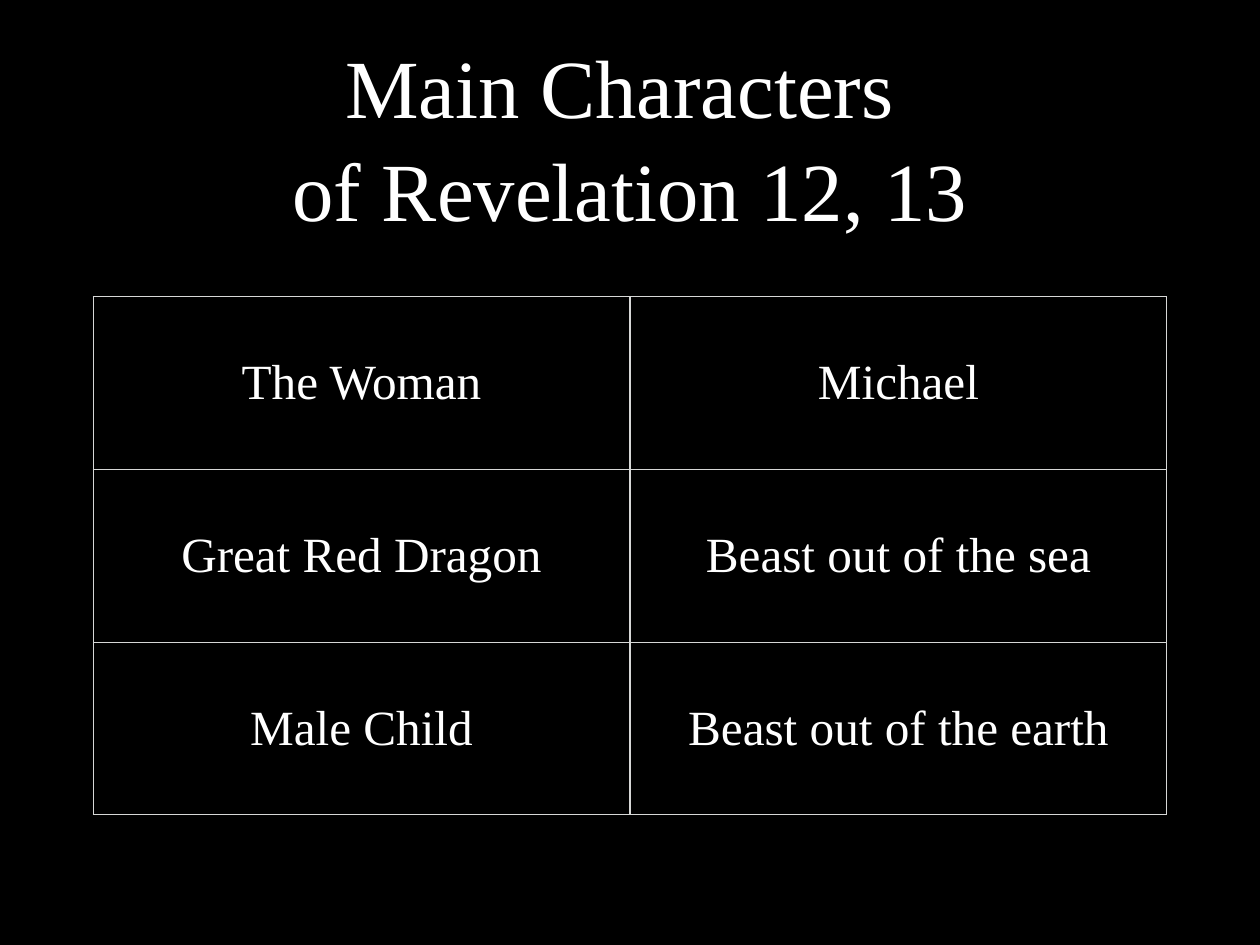
from dataclasses import dataclass

from lxml.etree import SubElement
from pptx import Presentation
from pptx.dml.color import RGBColor
from pptx.enum.text import MSO_ANCHOR as Anchor, MSO_AUTO_SIZE as Auto, PP_ALIGN as Align
from pptx.oxml.ns import qn
from pptx.table import _Cell as Cell
from pptx.util import Inches, Pt

BLACK, WHITE, GREY = "000000", "FFFFFF", "D6D7D6"
PAD = Inches(0.06)
BOX = {
    "margin_left": PAD, "margin_right": PAD,
    "margin_top": PAD, "margin_bottom": PAD,
    "vertical_anchor": Anchor.MIDDLE,
}


@dataclass
class Pair:
    left: str
    right: str


PAIRS = [
    Pair("The Woman", "Michael"),
    Pair("Great Red Dragon", "Beast out of the sea"),
    Pair("Male Child", "Beast out of the earth"),
]


def color(code: str) -> RGBColor:
    return RGBColor.from_string(code)


def apply(item, values: dict) -> None:
    for name, value in values.items():
        setattr(item, name, value)


def write(frame, text: str, size: float) -> None:
    frame.text = text
    for para in frame.paragraphs:
        para.alignment = Align.CENTER
        for run in para.runs:
            apply(run.font, {"name": "Times New Roman", "size": Pt(size)})
            run.font.color.rgb = color(WHITE)


def fill_cell(cell: Cell, text: str) -> None:
    write(cell.text_frame, text, 40)
    apply(cell, BOX)
    # Borders come before the fill in the cell properties
    props = cell._tc.get_or_add_tcPr()
    for side in ("a:lnL", "a:lnR", "a:lnT", "a:lnB"):
        line = SubElement(props, qn(side), w=str(Pt(1)))
        solid = SubElement(line, qn("a:solidFill"))
        SubElement(solid, qn("a:srgbClr"), val=GREY)
    cell.fill.solid()
    cell.fill.fore_color.rgb = color(BLACK)


def main() -> None:
    deck = Presentation()
    apply(deck, {"slide_width": Inches(14.22), "slide_height": Inches(10.67)})
    slide = deck.slides.add_slide(deck.slide_layouts[5])
    back = slide.background.fill
    back.solid()
    back.fore_color.rgb = color(BLACK)

    # Title
    title = slide.shapes.title
    apply(title, {"left": Inches(1.04), "top": Inches(0.28),
                  "width": Inches(12.14), "height": Inches(2.36)})
    frame = title.text_frame
    write(frame, "Main Characters \vof Revelation 12, 13", 67.2)
    apply(frame, {**BOX, "margin_top": Inches(0.18),
                  "word_wrap": True, "auto_size": Auto.NONE})
    frame.paragraphs[0].line_spacing = 1.04

    # Table of characters
    wide, high = 6.06, 1.95
    table = slide.shapes.add_table(
        len(PAIRS), 2, Inches(1.05), Inches(3.35),
        Inches(2 * wide), Inches(len(PAIRS) * high)).table
    apply(table, {"first_row": False, "horz_banding": False})
    for row, pair in enumerate(PAIRS):
        for col, text in enumerate((pair.left, pair.right)):
            fill_cell(table.cell(row, col), text)

    deck.save("out.pptx")


if __name__ == "__main__":
    main()
